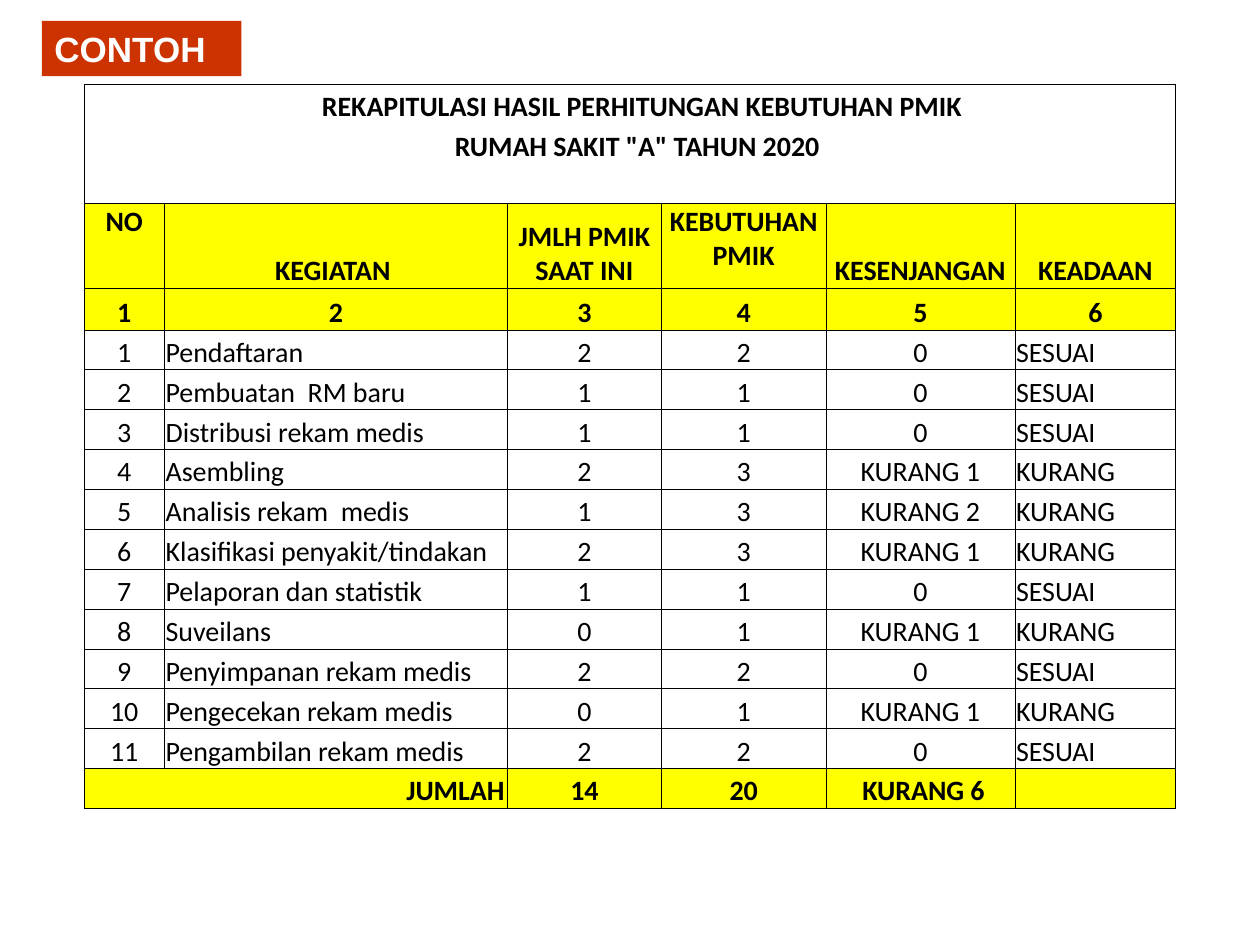
from lxml import etree
from pptx import Presentation
from pptx import util as u
from pptx.dml.color import RGBColor
from pptx.enum import shapes, text
from pptx.oxml import ns

Pt = u.Pt
BLACK = RGBColor(0x00, 0x00, 0x00)
WHITE = RGBColor(0xFF, 0xFF, 0xFF)
YELLOW = RGBColor(0xFF, 0xFF, 0x00)
RED = RGBColor(0xCC, 0x33, 0x00)

LEFT, CENTER, RIGHT = text.PP_ALIGN.LEFT, text.PP_ALIGN.CENTER, text.PP_ALIGN.RIGHT
TOP, BOTTOM = text.MSO_ANCHOR.TOP, text.MSO_ANCHOR.BOTTOM

# Content
TITLES = [("REKAPITULASI HASIL PERHITUNGAN KEBUTUHAN PMIK", 90),
          ('RUMAH SAKIT "A" TAHUN 2020', 166)]  # text, left indent
HEADERS = ["NO", "KEGIATAN ", "JMLH PMIK SAAT INI", "KEBUTUHAN PMIK",
           "KESENJANGAN", "KEADAAN"]
ACTIVITIES = [  # activity, present staff, needed staff
    ("Pendaftaran", 2, 2), ("Pembuatan  RM baru", 1, 1),
    ("Distribusi rekam medis", 1, 1), ("Asembling", 2, 3),
    ("Analisis rekam  medis", 1, 3), ("Klasifikasi penyakit/tindakan", 2, 3),
    ("Pelaporan dan statistik", 1, 1), ("Suveilans", 0, 1),
    ("Penyimpanan rekam medis", 2, 2), ("Pengecekan rekam medis", 0, 1),
    ("Pengambilan rekam medis", 2, 2)]
COL_WIDTHS = [46, 196, 88, 94, 108, 92]
TITLE_ROWS = 3
HEADER_ROW, NUMBER_ROW, FIRST_ROW = 3, 4, 5
TOTAL_ROW = FIRST_ROW + len(ACTIVITIES)
LAST_COL = len(COL_WIDTHS) - 1
ROW_HEIGHTS = [22.8] * TITLE_ROWS + [48.2, 24] + [22.8] * (len(ACTIVITIES) + 1)


def cell_sides(row, col):
    """Sides of a cell that carry a line."""
    if row < TITLE_ROWS:
        edges = {"L": col == 0, "R": col == LAST_COL,
                 "T": row == 0, "B": row == TITLE_ROWS - 1}
        return {side for side, drawn in edges.items() if drawn}
    if row == TOTAL_ROW and col < 2:
        return set("LTB") if col == 0 else set("RTB")
    return set("LRTB")


class Deck:
    table_font = {"name": "Calibri", "size": Pt(16), "bold": False}
    label_font = {"name": "Arial", "size": Pt(20), "bold": True}
    cell_format = {"margin_left": Pt(0.7), "margin_right": Pt(0.7),
                   "margin_top": Pt(0.7), "margin_bottom": 0,
                   "vertical_anchor": BOTTOM}

    def __init__(self, prs):
        self.s = prs.slides.add_slide(prs.slide_layouts[6])

    def put_text(self, tf, words, font, color, align):
        p = tf.paragraphs[0]
        p.alignment = align
        r = p.add_run()
        r.text = words
        for name, value in font.items():
            setattr(r.font, name, value)
        r.font.color.rgb = color

    def label(self, words, x, y, w, h):
        sp = self.s.shapes.add_shape(shapes.MSO_SHAPE.RECTANGLE,
                                     Pt(x), Pt(y), Pt(w), Pt(h))
        sp.shadow.inherit = False
        sp.fill.solid()
        sp.fill.fore_color.rgb = RED
        sp.line.fill.background()
        sp.text_frame.auto_size = text.MSO_AUTO_SIZE.SHAPE_TO_FIT_TEXT
        self.put_text(sp.text_frame, words, self.label_font, WHITE, LEFT)

    def table(self, x, y, widths, heights):
        tbl = self.s.shapes.add_table(len(heights), len(widths), Pt(x), Pt(y),
                                      Pt(sum(widths)), Pt(sum(heights))).table
        tbl.first_row = tbl.horz_banding = False
        for col, width in zip(tbl.columns, widths):
            col.width = Pt(width)
        for row, height in zip(tbl.rows, heights):
            row.height = Pt(height)
        return tbl

    def borders(self, cell, sides):
        tc_pr = cell._tc.get_or_add_tcPr()
        for side in "LRTB":
            ln = etree.SubElement(tc_pr, ns.qn("a:ln" + side), w=str(Pt(0.5)))
            if side in sides:
                fill = etree.SubElement(ln, ns.qn("a:solidFill"))
                etree.SubElement(fill, ns.qn("a:srgbClr"), val=str(BLACK))
            else:
                etree.SubElement(ln, ns.qn("a:noFill"))

    def cell(self, cell, words, sides, align=CENTER, bold=False, fill=None, **extra):
        self.borders(cell, sides)
        if fill is None:
            cell.fill.background()
        else:
            cell.fill.solid()
            cell.fill.fore_color.rgb = fill
        for name, value in {**self.cell_format, **extra}.items():
            setattr(cell, name, value)
        self.put_text(cell.text_frame, words, {**self.table_font, "bold": bold},
                      BLACK, align)


def table_rows():
    """Wording of every table row, top to bottom."""
    rows = [["", title, "", "", "", ""] for title, _ in TITLES]
    rows += [[""] * len(HEADERS), HEADERS, range(1, len(HEADERS) + 1)]
    for number, (activity, present, needed) in enumerate(ACTIVITIES, 1):
        gap = needed - present
        rows.append([number, activity, present, needed,
                     f"KURANG {gap}" if gap else 0, "KURANG" if gap else "SESUAI"])
    present, needed = (sum(a[i] for a in ACTIVITIES) for i in (1, 2))
    rows.append(["", "JUMLAH", present, needed, f" KURANG {needed - present}", ""])
    return rows


def cell_style(row, col):
    """Alignment, weight, fill and spacing by place in the table."""
    if row < TITLE_ROWS:
        style = {"align": LEFT, "bold": True}
        if row < len(TITLES) and col == 1:
            style["margin_left"] = Pt(TITLES[row][1])
        return style
    if FIRST_ROW <= row < TOTAL_ROW:
        return {"align": LEFT if col in (1, LAST_COL) else CENTER}
    style = {"bold": True, "fill": YELLOW}
    if row == HEADER_ROW and col in (0, 3):
        style["vertical_anchor"] = TOP
    if row == TOTAL_ROW and col == 1:
        style.update(align=RIGHT, margin_right=Pt(1.7))
    return style


def main():
    prs = Presentation()
    prs.slide_width, prs.slide_height = Pt(720), Pt(540)
    deck = Deck(prs)

    # Label
    deck.label("CONTOH", 24, 12, 114, 31.5)

    # Recapitulation table
    tbl = deck.table(48, 48, COL_WIDTHS, ROW_HEIGHTS)
    for row, values in enumerate(table_rows()):
        for col, value in enumerate(values):
            deck.cell(tbl.cell(row, col), str(value), cell_sides(row, col),
                      **cell_style(row, col))
    for row in range(len(TITLES)):
        tbl.cell(row, 1).merge(tbl.cell(row, LAST_COL - 1))

    prs.save("out.pptx")


if __name__ == "__main__":
    main()
